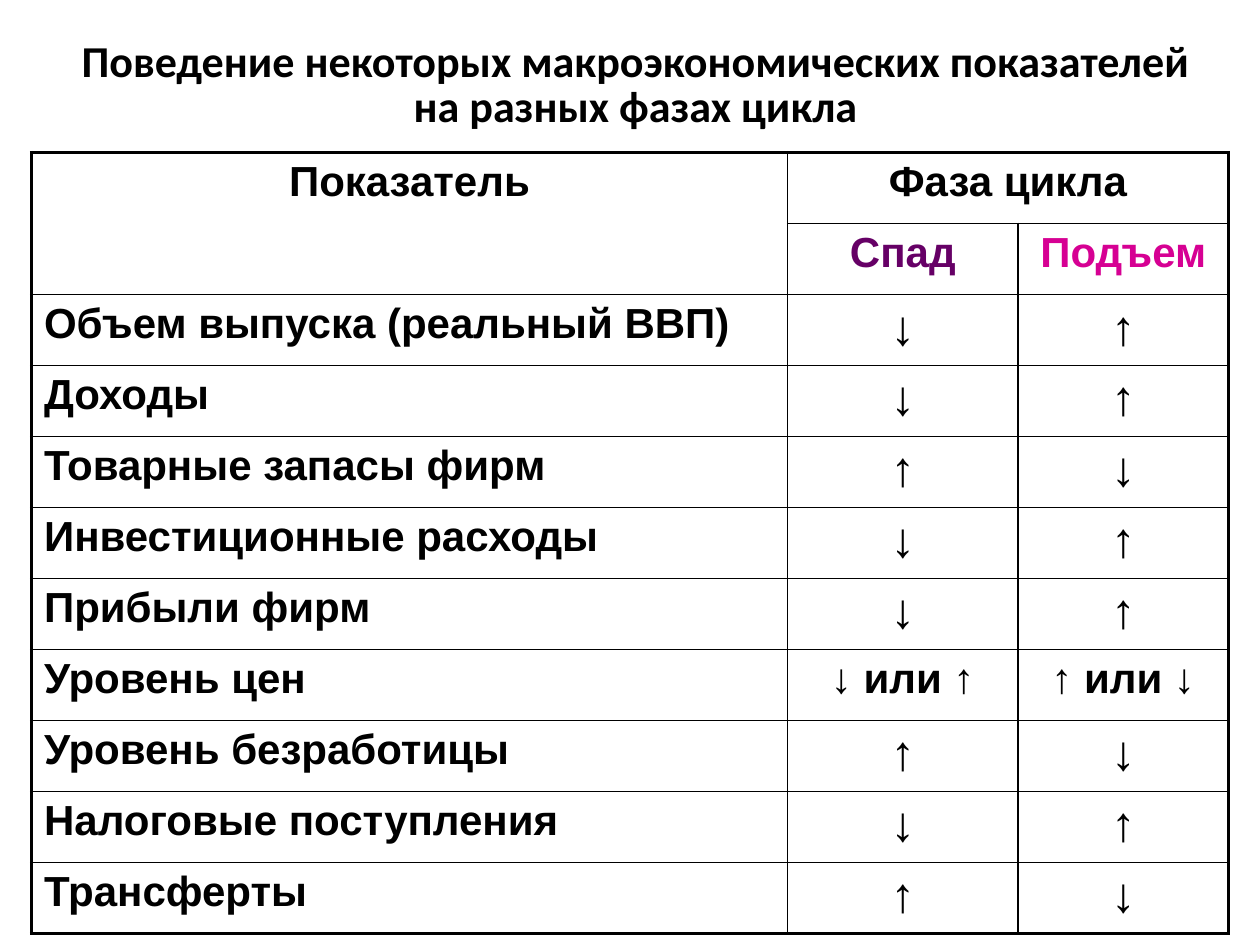
from dataclasses import dataclass

from lxml import etree
from pptx import Presentation
from pptx.dml.color import RGBColor
from pptx.enum.text import MSO_ANCHOR, PP_ALIGN
from pptx.oxml.ns import qn
from pptx.util import Inches, Pt

CENTER, LEFT = PP_ALIGN.CENTER, PP_ALIGN.LEFT
TOP = MSO_ANCHOR.TOP
TITLE_ONLY = 5

TITLE = "Поведение некоторых макроэкономических показателей на разных фазах цикла"
DOWN, UP = "↓", "↑"
HEADERS = [
    ("Показатель", "Фаза цикла", ""),
    ("", "Спад", "Подъем"),
]
INDICATORS = [
    ("Объем выпуска (реальный ВВП)", DOWN, UP),
    ("Доходы", DOWN, UP),
    ("Товарные запасы фирм", UP, DOWN),
    ("Инвестиционные расходы", DOWN, UP),
    ("Прибыли фирм", DOWN, UP),
    ("Уровень цен", "↓ или ↑", "↑ или ↓"),
    ("Уровень безработицы", UP, DOWN),
    ("Налоговые поступления", DOWN, UP),
    ("Трансферты", UP, DOWN),
]
COLUMN_WIDTHS = (6, 1.83, 1.67)


@dataclass(frozen=True)
class Theme:
    title_font: str = "Calibri"
    table_font: str = "Arial"
    ink: str = "000000"
    recession: str = "660066"
    expansion: str = "D60093"
    title_size: float = 25.2
    text_size: float = 24
    arrow_size: float = 28
    inner_line: float = 1
    outer_line: float = 2.25


class SlideBuilder:
    """Hold the theme and the current slide, and add styled elements to it."""

    def __init__(self, slide, theme):
        self.slide = slide
        self.theme = theme

    def format_text(self, paragraph, font_name, size, color, alignment):
        paragraph.alignment = alignment
        for run in paragraph.runs:
            run.font.name = font_name
            run.font.size = Pt(size)
            run.font.bold = True
            run.font.color.rgb = RGBColor.from_string(color)

    def title(self, text, left, top, width, height):
        shape = self.slide.shapes.title
        shape.left, shape.top = Inches(left), Inches(top)
        shape.width, shape.height = Inches(width), Inches(height)
        text_frame = shape.text_frame
        text_frame.text = text
        text_frame.word_wrap = True
        text_frame.vertical_anchor = TOP
        text_frame.margin_top = 0
        paragraph = text_frame.paragraphs[0]
        paragraph.line_spacing = 0.85
        self.format_text(paragraph, self.theme.title_font, self.theme.title_size,
                         self.theme.ink, CENTER)

    def border(self, cell, side, width):
        line = etree.SubElement(cell._tc.get_or_add_tcPr(), qn(f"a:ln{side}"), w=str(Pt(width)))
        fill = etree.SubElement(line, qn("a:solidFill"))
        etree.SubElement(fill, qn("a:srgbClr"), val=self.theme.ink)

    def cell_borders(self, cell, row, column, row_count, column_count):
        last_row = row + max(cell.span_height, 1) == row_count
        last_column = column + max(cell.span_width, 1) == column_count
        outer_edges = {"L": column == 0, "R": last_column, "T": row == 0, "B": last_row}
        for side, is_outer in outer_edges.items():
            self.border(cell, side, self.theme.outer_line if is_outer else self.theme.inner_line)
        cell.fill.background()

    def table(self, rows, header_count, colors, left, top, column_widths, height):
        row_count, column_count = len(rows), len(column_widths)
        table = self.slide.shapes.add_table(
            row_count, column_count, Inches(left), Inches(top),
            Inches(sum(column_widths)), Inches(height)).table
        table.first_row = table.horz_banding = False
        for column, width in zip(table.columns, column_widths):
            column.width = Inches(width)
        for row in table.rows:
            row.height = Inches(height / row_count)
        table.cell(0, 0).merge(table.cell(1, 0))
        table.cell(0, 1).merge(table.cell(0, 2))
        for row_index, texts in enumerate(rows):
            for column_index, text in enumerate(texts):
                cell = table.cell(row_index, column_index)
                self.cell_borders(cell, row_index, column_index, row_count, column_count)
                if cell.is_spanned:
                    continue
                cell.text_frame.text = text
                is_label = column_index == 0 and row_index >= header_count
                size = self.theme.arrow_size if text in (DOWN, UP) else self.theme.text_size
                self.format_text(cell.text_frame.paragraphs[0], self.theme.table_font, size,
                                 colors.get(text, self.theme.ink), LEFT if is_label else CENTER)


def main():
    presentation = Presentation()
    presentation.slide_width, presentation.slide_height = Inches(10), Inches(7.5)
    slide = presentation.slides.add_slide(presentation.slide_layouts[TITLE_ONLY])
    theme = Theme()
    builder = SlideBuilder(slide, theme)
    builder.title(TITLE, 0.42, 0.33, 9.25, 1.25)
    phase_colors = {"Спад": theme.recession, "Подъем": theme.expansion}
    builder.table(HEADERS + INDICATORS, len(HEADERS), phase_colors,
                  0.25, 1.21, COLUMN_WIDTHS, 6.2)
    presentation.save("out.pptx")


if __name__ == "__main__":
    main()
